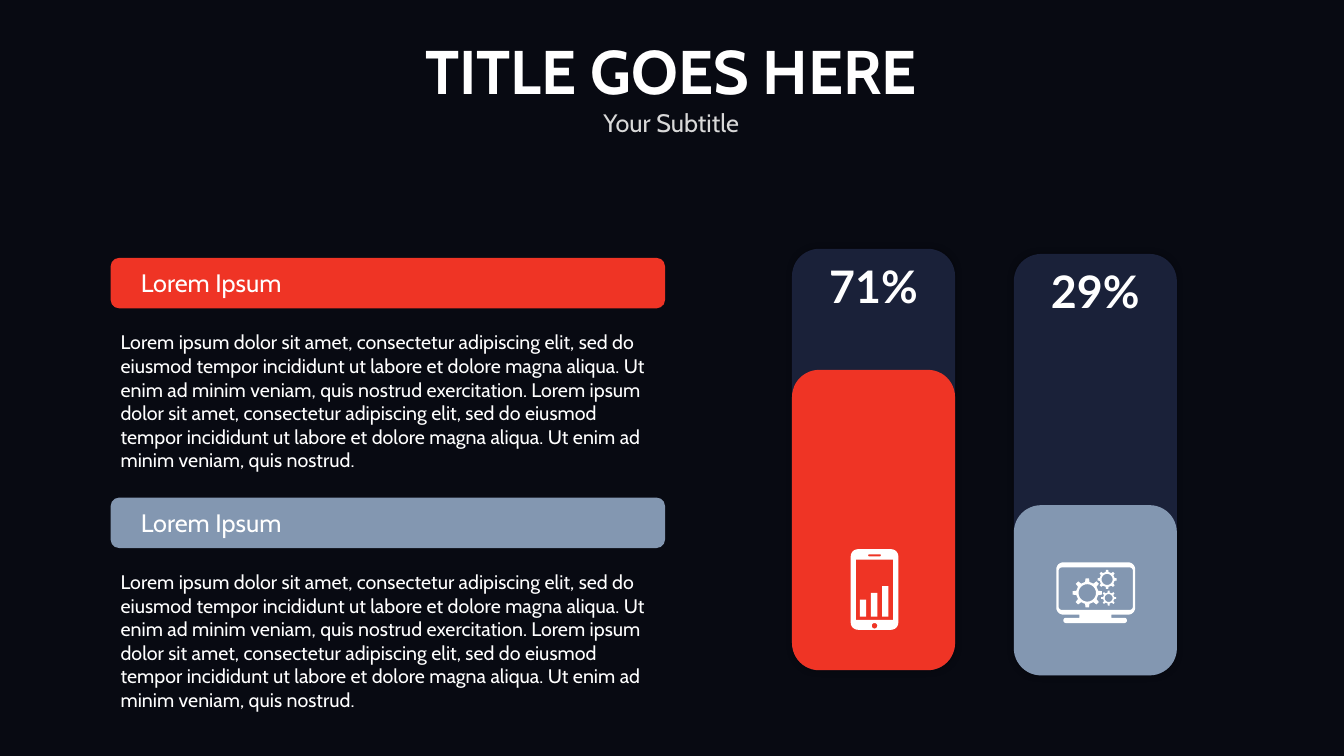
from math import cos, pi, sin

from lxml import etree
from pptx import Presentation
from pptx.dml.color import RGBColor
from pptx.enum.shapes import MSO_SHAPE
from pptx.enum.text import MSO_ANCHOR, MSO_AUTO_SIZE, PP_ALIGN
from pptx.oxml.ns import qn
from pptx.util import Cm, Pt

ROUNDED = MSO_SHAPE.ROUNDED_RECTANGLE
RECTANGLE = MSO_SHAPE.RECTANGLE
LEFT, CENTER = PP_ALIGN.LEFT, PP_ALIGN.CENTER
TOP = MSO_ANCHOR.TOP
FIXED_SIZE = MSO_AUTO_SIZE.NONE

NIGHT, NAVY = "080A12", "222A49"
RED, STEEL = "EF3425", "8397B1"
WHITE, SILVER = "FFFFFF", "D9D9D9"

PASSAGE = (
    "Lorem ipsum dolor sit amet, consectetur adipiscing elit, sed do eiusmod "
    "tempor incididunt ut labore et dolore magna aliqua. Ut enim ad minim veniam, "
    "quis nostrud exercitation. Lorem ipsum dolor sit amet, consectetur adipiscing "
    "elit, sed do eiusmod tempor incididunt ut labore et dolore magna aliqua. "
    "Ut enim ad minim veniam, quis nostrud."
)


def rgb(code):
    return RGBColor.from_string(code)


def rounded_outline(left, top, width, height, radius):
    corners = [
        (left + width - radius, top + height - radius),
        (left + radius, top + height - radius),
        (left + radius, top + radius),
        (left + width - radius, top + radius),
    ]
    return [
        (x + radius * cos(angle), y + radius * sin(angle))
        for quarter, (x, y) in enumerate(corners)
        for angle in [(quarter + step / 6) * pi / 2 for step in range(7)]
    ]


def gear_outlines(x, y, tip, root, hole, teeth=8):
    rim = []
    for tooth in range(teeth):
        for offset, radius in [(-0.25, root), (-0.15, tip), (0.15, tip), (0.25, root)]:
            angle = (tooth + offset) * 2 * pi / teeth
            rim.append((x + radius * cos(angle), y + radius * sin(angle)))
    return [rim, rounded_outline(x - hole, y - hole, 2 * hole, 2 * hole, hole)]


class Deck:
    """Holds the text style and the current slide."""

    def __init__(self, font):
        self.font = font
        self.presentation = Presentation()
        self.presentation.slide_width = Cm(33.87)
        self.presentation.slide_height = Cm(19.05)
        self.slide = self.presentation.slides.add_slide(self.presentation.slide_layouts[5])
        self.shapes = self.slide.shapes
        self.slide.background.fill.solid()
        self.slide.background.fill.fore_color.rgb = rgb(NIGHT)

    def group(self):
        return self.shapes.add_group_shape().shapes

    def add_words(self, paragraph, words, size, color=WHITE, align=LEFT, bold=False, font=None):
        paragraph.alignment = align
        run = paragraph.add_run()
        run.text = words
        run.font.name = font or self.font
        run.font.size = Pt(size)
        run.font.bold = bold
        run.font.color.rgb = rgb(color)

    def title(self, heading, subtitle, left, top, width, height):
        holder = self.shapes.title
        holder.left, holder.top = Cm(left), Cm(top)
        holder.width, holder.height = Cm(width), Cm(height)
        frame = holder.text_frame
        frame.auto_size = FIXED_SIZE
        frame.vertical_anchor = TOP
        self.add_words(frame.paragraphs[0], heading, 44, align=CENTER, bold=True)
        self.add_words(frame.add_paragraph(), subtitle, 18, SILVER, CENTER)

    def text(self, words, left, top, width, height, size, into=None, **style):
        box = (into or self.shapes).add_textbox(Cm(left), Cm(top), Cm(width), Cm(height))
        box.text_frame.word_wrap = True
        self.add_words(box.text_frame.paragraphs[0], words, size, **style)

    def paint(self, shape, color):
        shape.shadow.inherit = False
        shape.fill.solid()
        shape.fill.fore_color.rgb = rgb(color)
        shape.line.fill.background()

    def block(self, kind, left, top, width, height, color, into=None):
        target = self.shapes if into is None else into
        shape = target.add_shape(kind, Cm(left), Cm(top), Cm(width), Cm(height))
        self.paint(shape, color)
        return shape

    def track(self, left, top, width, height):
        properties = self.block(ROUNDED, left, top, width, height, NAVY)._element.spPr
        fill = properties.find(qn("a:solidFill")).find(qn("a:srgbClr"))
        etree.SubElement(fill, qn("a:alpha"), val="75000")
        glow = etree.SubElement(
            properties.find(qn("a:effectLst")), qn("a:outerShdw"),
            blurRad=str(Pt(5)), dist="0", dir="0", algn="ctr", rotWithShape="0",
        )
        shade = etree.SubElement(glow, qn("a:srgbClr"), val="000000")
        etree.SubElement(shade, qn("a:alpha"), val="40000")

    def outline(self, contours, into):
        scaled = [[(Cm(x), Cm(y)) for x, y in contour] for contour in contours]
        builder = into.build_freeform(*scaled[0][0])
        for index, contour in enumerate(scaled):
            if index:
                builder.move_to(*contour[0])
            builder.add_line_segments(contour[1:], close=True)
        self.paint(builder.convert_to_shape(), WHITE)

    def section(self, heading, passage, top, color):
        banner = self.group()
        self.block(ROUNDED, 2.79, top, 13.97, 1.27, color, banner)
        self.text(heading, 3.3, top + 0.11, 7.37, 1.02, 18, banner)
        self.text(passage, 2.79, top + 1.7, 13.97, 3.84, 14)

    def column(self, share, left, top, level, color):
        width, height = 4.11, 10.62
        self.track(left, top, width, height)
        self.block(ROUNDED, left, top + height - level, width, level, color)
        self.text(share, left, top + 0.13, width, 1.63, 32,
                  align=CENTER, bold=True, font="Lato")

    def phone(self):
        icon = self.group()
        self.outline([
            rounded_outline(21.44, 13.84, 1.2, 2.03, 0.18),
            rounded_outline(21.88, 13.97, 0.32, 0.05, 0.02),
            rounded_outline(21.57, 14.1, 0.94, 1.52, 0),
            rounded_outline(21.97, 15.7, 0.14, 0.14, 0.07),
        ], icon)
        for index, height in enumerate([0.43, 0.6, 0.77]):
            self.block(RECTANGLE, 21.67 + 0.28 * index, 15.54 - height, 0.16, height, WHITE, icon)

    def monitor(self):
        icon = self.group()
        self.outline([
            rounded_outline(26.62, 14.17, 1.99, 1.32, 0.18),
            rounded_outline(26.68, 14.3, 1.87, 1.07, 0.08),
            rounded_outline(27.2, 15.49, 0.81, 0.08, 0),
            rounded_outline(26.8, 15.57, 1.6, 0.13, 0.06),
        ], icon)
        for gear in [
            (27.4, 14.94, 0.37, 0.28, 0.22),
            (27.9, 14.6, 0.24, 0.19, 0.14),
            (27.94, 15.07, 0.19, 0.14, 0.1),
        ]:
            self.outline(gear_outlines(*gear), icon)


def main():
    deck = Deck("Cabin")
    deck.title("TITLE GOES HERE", "Your Subtitle", 9.27, 0.71, 15.29, 2.9)
    for index, color in enumerate([RED, STEEL]):
        deck.section("Lorem Ipsum", PASSAGE, 6.5 + 6.04 * index, color)
    deck.column("71%", 19.96, 6.27, 7.57, RED)
    deck.phone()
    deck.column("29%", 25.55, 6.4, 4.29, STEEL)
    deck.monitor()
    deck.presentation.save("out.pptx")


if __name__ == "__main__":
    main()
